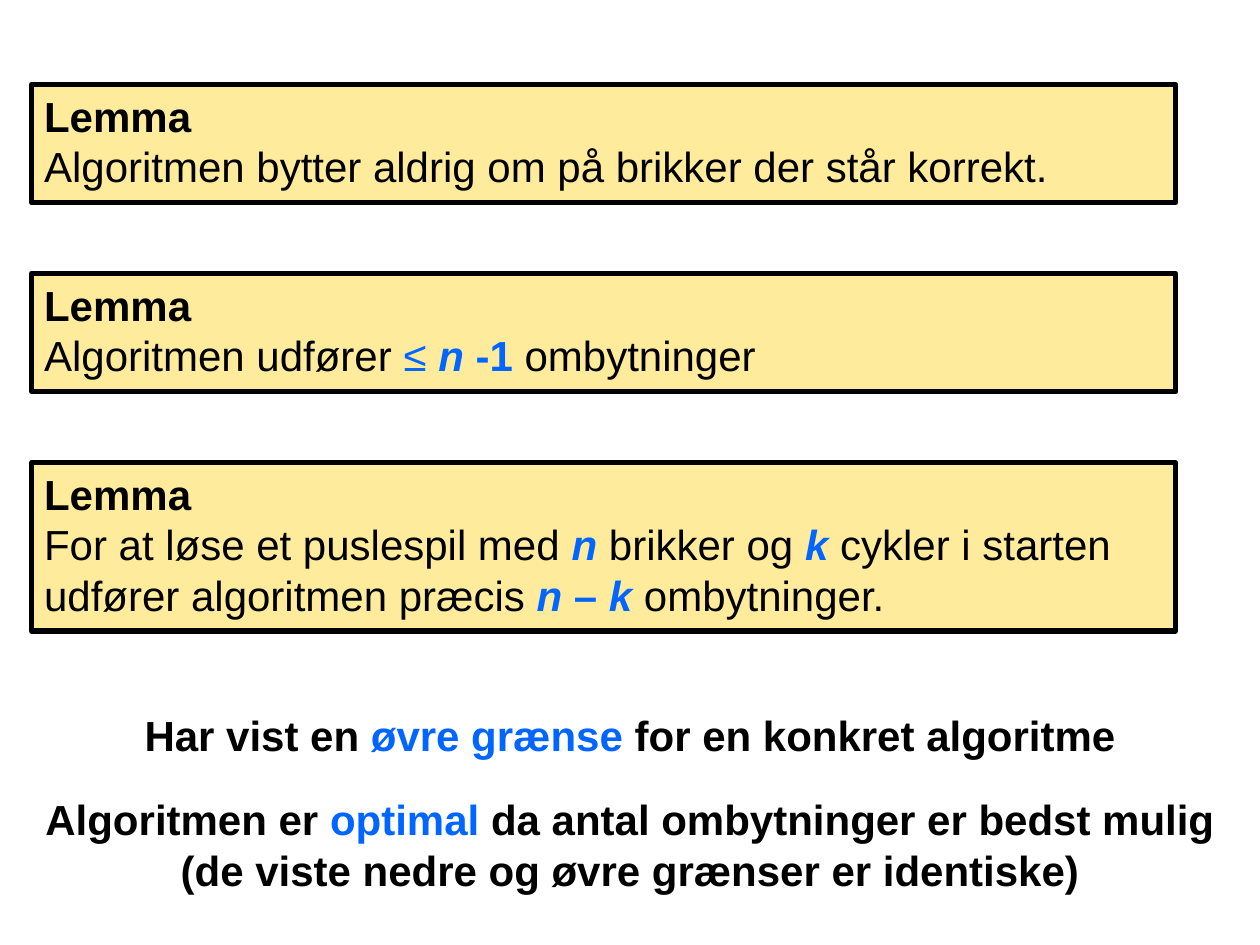
from dataclasses import dataclass

from lxml import etree
from pptx import Presentation
from pptx import util as u
from pptx.dml.color import RGBColor
from pptx.enum import shapes, text
from pptx.oxml.ns import qn


@dataclass(frozen=True)
class Theme:
    font: str = "Arial"
    size: int = 24
    ink: str = "000000"
    accent: str = "0066FF"
    box: str = "FFCC00"
    box_alpha: int = 39
    border: int = 3


THEME = Theme()


def styled(words, bold=False, italic=False, color=THEME.ink):
    return words, bold, italic, color


def symbol(words, **style):
    return styled(words, **{"bold": True, "italic": True, "color": THEME.accent, **style})


class LemmaSlide:
    def __init__(self, presentation, theme):
        self.theme = theme
        self.slide = presentation.slides.add_slide(presentation.slide_layouts[6])

    def fill_text(self, shape, paragraphs, alignment):
        frame = shape.text_frame
        frame.word_wrap = True
        frame.vertical_anchor = text.MSO_ANCHOR.TOP
        for index, runs in enumerate(paragraphs):
            paragraph = frame.add_paragraph() if index else frame.paragraphs[0]
            paragraph.alignment = alignment
            for words, bold, italic, color in runs:
                run = paragraph.add_run()
                run.text = words
                font = run.font
                font.name, font.size = self.theme.font, u.Pt(self.theme.size)
                font.bold, font.italic = bold, italic
                font.color.rgb = RGBColor.from_string(color)

    def lemma(self, top, height, runs):
        shape = self.slide.shapes.add_shape(
            shapes.MSO_SHAPE.RECTANGLE, u.Cm(0.64), u.Cm(top), u.Cm(23.06), u.Cm(height))
        shape.shadow.inherit = False
        shape.fill.solid()
        shape.fill.fore_color.rgb = RGBColor.from_string(self.theme.box)
        color = shape.element.spPr.find(qn("a:solidFill"))[0]
        etree.SubElement(color, qn("a:alpha"), val=str(self.theme.box_alpha * 1000))
        shape.line.color.rgb = RGBColor.from_string(self.theme.ink)
        shape.line.width = u.Pt(self.theme.border)
        self.fill_text(shape, [[styled("Lemma", bold=True)], runs], text.PP_ALIGN.LEFT)

    def conclusion(self, top, height, before, key, after):
        shape = self.slide.shapes.add_textbox(0, u.Cm(top), u.Cm(25.4), u.Cm(height))
        runs = [styled(before, bold=True),
                styled(key, bold=True, color=self.theme.accent),
                styled(after, bold=True)]
        self.fill_text(shape, [runs], text.PP_ALIGN.CENTER)


def main():
    presentation = Presentation()
    presentation.slide_width, presentation.slide_height = u.Cm(25.4), u.Cm(19.05)
    page = LemmaSlide(presentation, THEME)

    lemmas = [
        (2.39, [styled("Algoritmen bytter aldrig om på brikker der står korrekt.")]),
        (2.39, [styled("Algoritmen udfører "),
                symbol("≤ ", bold=False, italic=False),
                symbol("n"),
                symbol(" -1", italic=False),
                styled(" ombytninger")]),
        (3.4, [styled("For at løse et puslespil med "),
               symbol("n "),
               styled("brikker og "),
               symbol("k "),
               styled("cykler i starten udfører algoritmen præcis "),
               symbol("n "),
               symbol("–", italic=False),
               symbol(" k "),
               styled("ombytninger.")]),
    ]
    for index, (height, runs) in enumerate(lemmas):
        page.lemma(1.7 + 3.81 * index, height, runs)

    page.conclusion(14.18, 1.27, "Har vist en ", "øvre grænse", " for en konkret algoritme")
    page.conclusion(15.88, 2.31, "Algoritmen er ", "optimal ",
                    "da antal ombytninger er bedst mulig "
                    "(de viste nedre og øvre grænser er identiske)")
    presentation.save("out.pptx")


if __name__ == "__main__":
    main()
